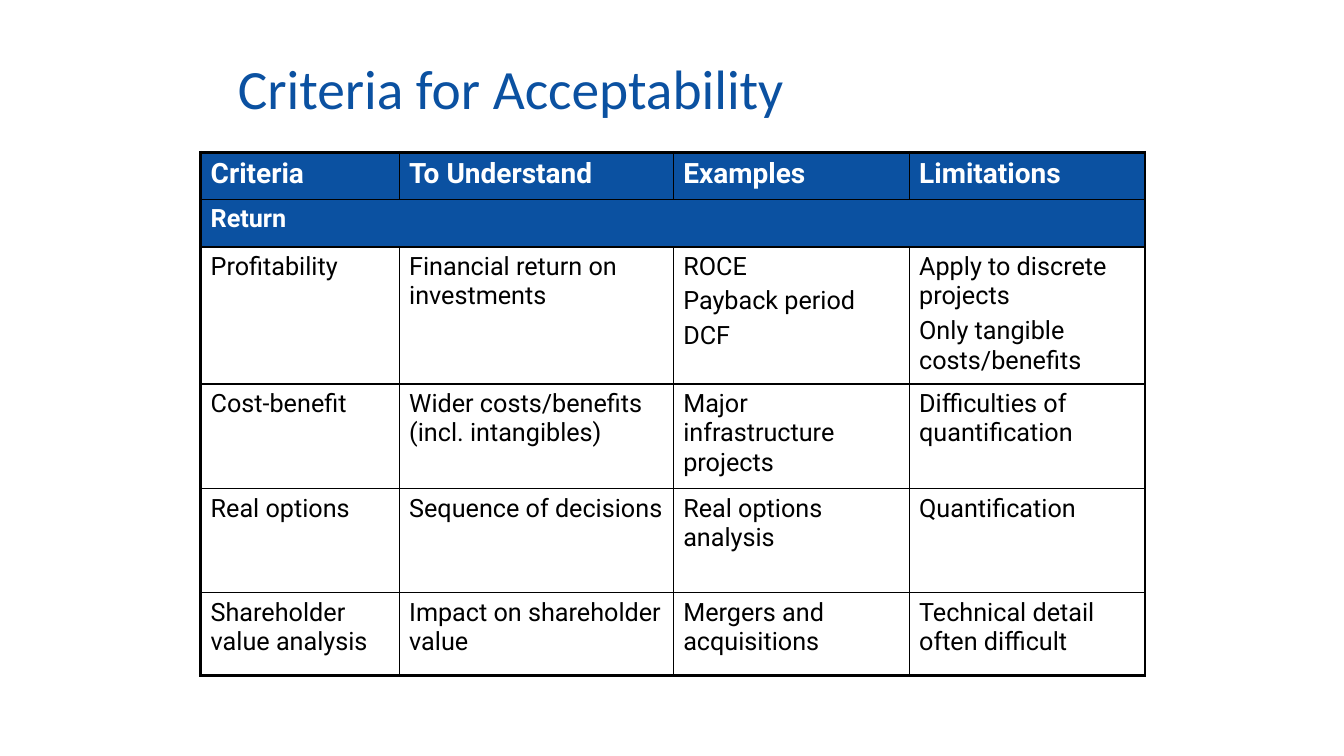
from dataclasses import dataclass
from lxml.etree import SubElement
from pptx import Presentation
from pptx.dml.color import RGBColor
from pptx.enum.text import MSO_ANCHOR, MSO_AUTO_SIZE, PP_ALIGN
from pptx.oxml.ns import qn
from pptx.util import Pt


@dataclass(frozen=True)
class Theme:
    blue: str = "0B51A1"
    white: str = "FFFFFF"
    black: str = "000000"
    head: str = "Calibri"
    body: str = "Roboto"
    title: float = 39.6
    label: float = 20
    text: float = 18
    thick: float = 2.25
    thin: float = 1


class Deck:
    def __init__(self, theme):
        self.theme = theme
        self.show = Presentation()
        self.show.slide_width = Pt(960)
        self.show.slide_height = Pt(540)
        self.slide = self.show.slides.add_slide(self.show.slide_layouts[5])

    def style(self, part, name, size, color, bold=False):
        form = {"name": name, "size": Pt(size), "bold": bold}
        for key, value in form.items():
            setattr(part.font, key, value)
        part.font.color.rgb = RGBColor.from_string(color)

    def title(self, text, box):
        shape = self.slide.shapes.title
        for key, value in zip(("left", "top", "width", "height"), box):
            setattr(shape, key, Pt(value))
        frame = shape.text_frame
        frame.text = text
        form = {
            "word_wrap": True,
            "auto_size": MSO_AUTO_SIZE.NONE,
            "vertical_anchor": MSO_ANCHOR.MIDDLE,
        }
        for key, value in form.items():
            setattr(frame, key, value)
        para = frame.paragraphs[0]
        para.alignment = PP_ALIGN.LEFT
        para.line_spacing = 0.9
        self.style(para.runs[0], self.theme.head, self.theme.title, self.theme.blue)

    def border(self, cell, edges):
        props = cell._tc.get_or_add_tcPr()
        for spot, (side, thick) in enumerate(edges.items()):
            width = self.theme.thick if thick else self.theme.thin
            line = SubElement(props, qn(f"a:ln{side}"), w=str(Pt(width)))
            fill = SubElement(line, qn("a:solidFill"))
            SubElement(fill, qn("a:srgbClr"), val=self.theme.black)
            props.insert(spot, line)

    def cell(self, cell, text, size, head):
        theme = self.theme
        if head:
            cell.fill.solid()
            cell.fill.fore_color.rgb = RGBColor.from_string(theme.blue)
        else:
            cell.fill.background()
        cell.text = text
        color = theme.white if head else theme.black
        for para in cell.text_frame.paragraphs:
            para.space_before = Pt(size * 0.2)
            for run in para.runs:
                self.style(run, theme.body, size, color, head)

    def table(self, data, spot, widths, heights):
        left, top = map(Pt, spot)
        size = Pt(sum(widths)), Pt(sum(heights))
        grid = self.slide.shapes.add_table(
            len(heights), len(widths), left, top, *size
        ).table
        grid.horz_banding = False
        for col, width in zip(grid.columns, widths):
            col.width = Pt(width)
        for row, height in zip(grid.rows, heights):
            row.height = Pt(height)
        for r, line in enumerate(data):
            if len(line) == 1:
                grid.cell(r, 0).merge(grid.cell(r, len(widths) - 1))
            type_size = self.theme.text if r else self.theme.label
            for c in range(len(widths)):
                cell = grid.cell(r, c)
                text = line[c] if c < len(line) else ""
                self.cell(cell, text, type_size, r < 2)
                last = c == len(widths) - 1 or len(line) == 1
                self.border(cell, {
                    "L": c == 0,
                    "R": last,
                    "T": r == 0,
                    "B": r == len(heights) - 1,
                })


ROWS = [
    ["Criteria", "To Understand", "Examples", "Limitations"],
    ["Return"],
    ["Profitability", "Financial return on investments",
     "ROCE\nPayback period\nDCF",
     "Apply to discrete projects\nOnly tangible costs/benefits"],
    ["Cost-benefit", "Wider costs/benefits (incl. intangibles)",
     "Major infrastructure projects", "Difficulties of quantification"],
    ["Real options", "Sequence of decisions",
     "Real options analysis", "Quantification"],
    ["Shareholder value analysis", "Impact on shareholder value",
     "Mergers and acquisitions", "Technical detail often difficult"],
]


def main():
    deck = Deck(Theme())
    deck.title("Criteria for Acceptability", (162.7, 39.6, 648, 51.1))
    deck.table(
        ROWS,
        (143.3, 108.8),
        (141.8, 195.8, 168.5, 168.5),
        (33.8, 33.8, 97.9, 74.9, 74.2, 59),
    )
    deck.show.save("out.pptx")


if __name__ == "__main__":
    main()
